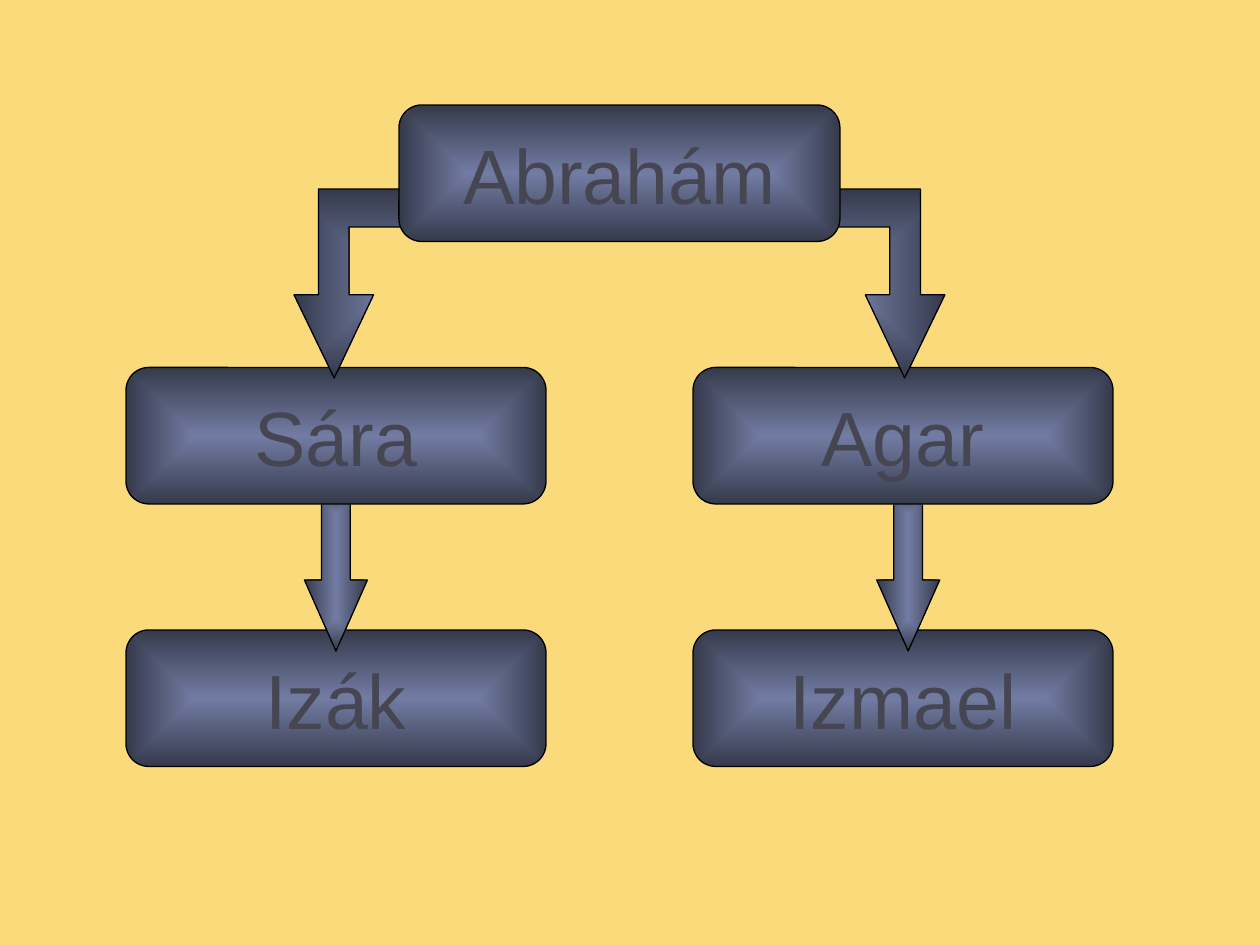
from pptx import Presentation
from pptx.dml.color import RGBColor
from pptx.enum.shapes import MSO_SHAPE as SHAPE
from pptx.enum.text import MSO_ANCHOR as ANCHOR, PP_ALIGN as ALIGN
from pptx.oxml import parse_xml
from pptx.util import Pt

NS = "http://schemas.openxmlformats.org/drawingml/2006/main"
BOX_H = 78
AXIS = 354  # vertical line the tree is mirrored about
ELBOW = [(191, 216), (213.5, 168.5), (199.5, 168.5), (199.5, 129.7), (270, 129.7),
         (270, 108), (182, 108), (182, 168.5), (168, 168.5)]


def rgb(hex_color):
    return RGBColor.from_string(hex_color)


def style(sp, path):
    """Gradient from a light centre to dark edges, with a thin black outline."""
    sp.shadow.inherit = False
    sp.line.color.rgb = rgb("000000")
    sp.line.width = Pt(0.75)
    sp.fill.gradient()
    grad = sp._element.spPr.find(f"{{{NS}}}gradFill")
    grad.getparent().replace(grad, parse_xml(
        f'<a:gradFill xmlns:a="{NS}" rotWithShape="1"><a:gsLst>'
        '<a:gs pos="0"><a:srgbClr val="727CA3"/></a:gs>'
        '<a:gs pos="100000"><a:srgbClr val="353A4B"/></a:gs>'
        f'</a:gsLst><a:path path="{path}">'
        '<a:fillToRect l="50000" t="50000" r="50000" b="50000"/></a:path></a:gradFill>'))


def add_person(shapes, name, x, y, w=240):
    sp = shapes.add_shape(SHAPE.ROUNDED_RECTANGLE, Pt(x), Pt(y), Pt(w), Pt(BOX_H))
    sp.adjustments[0] = 0.167
    style(sp, "shape")
    tf = sp.text_frame
    tf.word_wrap = False
    tf.vertical_anchor = ANCHOR.MIDDLE
    p = tf.paragraphs[0]
    p.alignment = ALIGN.CENTER
    r = p.add_run()
    r.text = name
    r.font.name = "Arial"
    r.font.size = Pt(44)
    r.font.color.rgb = rgb("464653")


def add_branch(shapes, mother, son, x, y, arrow_x):
    """Son, down arrow and mother, stacked from back to front."""
    add_person(shapes, son, x, y + 150)
    arrow = shapes.add_shape(SHAPE.DOWN_ARROW, Pt(arrow_x), Pt(y + 66), Pt(36), Pt(96))
    arrow.adjustments[0] = 0.458
    arrow.adjustments[1] = 1.127
    style(arrow, "rect")
    add_person(shapes, mother, x, y)


def add_elbow(shapes, mirrored):
    pts = [(Pt(2 * AXIS - x if mirrored else x), Pt(y)) for x, y in ELBOW]
    builder = shapes.build_freeform(*pts[0], scale=1.0)
    builder.add_line_segments(pts[1:], close=True)
    style(builder.convert_to_shape(), "rect")


def main():
    prs = Presentation()
    prs.slide_width, prs.slide_height = Pt(720), Pt(540)
    s = prs.slides.add_slide(prs.slide_layouts[6])
    s.background.fill.solid()
    s.background.fill.fore_color.rgb = rgb("FADA7A")

    # Mothers and sons
    add_branch(s.shapes, "Sára", "Izák", 72, 210, 174)
    add_branch(s.shapes.add_group_shape().shapes, "Agar", "Izmael", 396, 210, 501)

    # Father, over the two arrows that leave him
    for mirrored in (False, True):
        add_elbow(s.shapes, mirrored)
    add_person(s.shapes, "Abrahám", AXIS - 126, 60, 252)

    prs.save("out.pptx")


if __name__ == "__main__":
    main()
